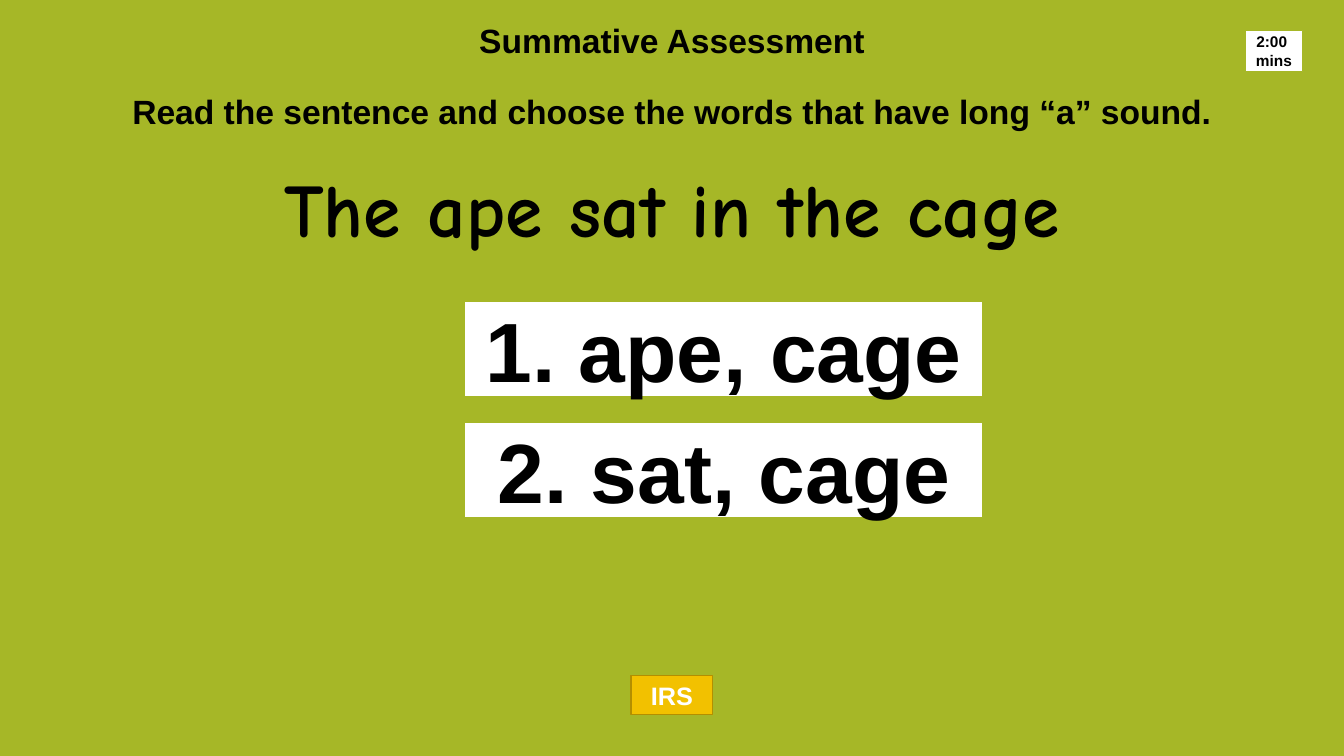
from pptx import Presentation
from pptx.dml.color import RGBColor
from pptx.enum.shapes import MSO_SHAPE
from pptx.enum.text import MSO_ANCHOR, PP_ALIGN
from pptx.util import Inches, Pt

RECT = MSO_SHAPE.RECTANGLE
MIDDLE = MSO_ANCHOR.MIDDLE
CENTER = PP_ALIGN.CENTER

COLORS = {
    "green": "A6B727",
    "white": "FFFFFF",
    "black": "000000",
    "gold": "F2C100",
    "dark_gold": "B38F00",
}
SLIDE_W, SLIDE_H = 13.33, 7.5


def rgb(name):
    return RGBColor.from_string(COLORS[name])


def write(tf, text, size, font="Arial", color="black", spacing=None):
    """Fill a text frame with centred bold text, one paragraph a line."""
    tf.word_wrap = True
    for i, line in enumerate(text.split("\n")):
        p = tf.add_paragraph() if i else tf.paragraphs[0]
        p.alignment = CENTER
        if spacing:
            p.line_spacing = spacing
        r = p.add_run()
        r.text = line
        r.font.name = font
        r.font.size = Pt(size)
        r.font.bold = True
        r.font.color.rgb = rgb(color)


def add_heading(s, top, text, **fmt):
    """Text line across the full slide width."""
    sp = s.shapes.add_textbox(0, Inches(top), Inches(SLIDE_W), Inches(0.4))
    write(sp.text_frame, text, spacing=0.85, **fmt)


def add_box(s, box, text, fill="white", line="green", **fmt):
    """Filled rectangle with a label in its middle."""
    sp = s.shapes.add_shape(RECT, *[Inches(v) for v in box])
    sp.shadow.inherit = False
    sp.fill.solid()
    sp.fill.fore_color.rgb = rgb(fill)
    sp.line.color.rgb = rgb(line)
    sp.line.width = Pt(1)
    sp.text_frame.vertical_anchor = MIDDLE
    write(sp.text_frame, text, **fmt)


def main():
    prs = Presentation()
    prs.slide_width, prs.slide_height = Inches(SLIDE_W), Inches(SLIDE_H)
    s = prs.slides.add_slide(prs.slide_layouts[6])
    s.background.fill.solid()
    s.background.fill.fore_color.rgb = rgb("green")

    # Title and instruction
    add_heading(s, 0.21, "Summative Assessment", size=24)
    add_heading(s, 0.91, "Read the sentence and choose the words that have "
                "long “a” sound.", size=24)

    # Answer choices
    for i, answer in enumerate(["ape, cage", "sat, cage"]):
        add_box(s, (4.61, 2.99 + 1.2 * i, 5.14, 0.95),
                f"{i + 1}. {answer}", size=60)

    # Response button
    add_box(s, (6.26, 6.7, 0.81, 0.39), "IRS", fill="gold",
            line="dark_gold", size=18, color="white")

    # Sentence to read
    add_heading(s, 1.7, "The ape sat in the cage", size=54, font="Comic Neue")

    # Time limit
    add_box(s, (12.35, 0.3, 0.57, 0.41), "2:00 \nmins", size=11)

    prs.save("out.pptx")


if __name__ == "__main__":
    main()
